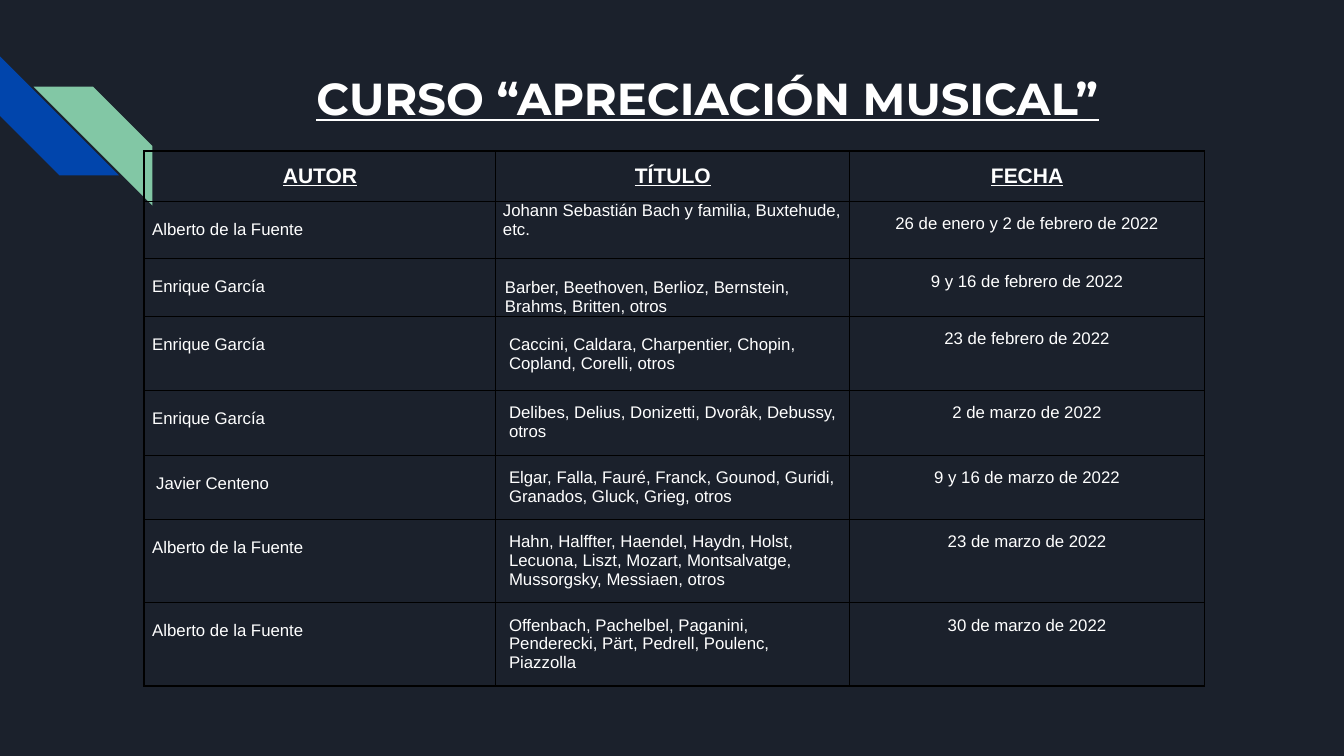
from lxml.etree import SubElement
from pptx import Presentation
from pptx.dml.color import RGBColor
from pptx.enum.shapes import MSO_SHAPE
from pptx.enum.text import MSO_ANCHOR, MSO_AUTO_SIZE, PP_ALIGN
from pptx.oxml import parse_xml
from pptx.oxml.ns import nsdecls, qn
from pptx.util import Inches, Pt

COLORS = {"night": "1B212C", "blue": "0145AC", "green": "82C7A5",
          "text": "FFFFFF", "border": "000000"}
COLUMNS, ROWS = 40, 30
INSET = 0.13

HEADINGS = ["AUTOR", "TÍTULO", "FECHA"]
COLUMN_WIDTHS = [10.47, 10.53, 10.56]
ROW_HEIGHTS = [2, 2.27, 2.27, 2.96, 2.56, 2.56, 3.3, 3.3]

# Author, author indent, titles, title insets (left, top, right, bottom), date
PADDED = (INSET,) * 4
SESSIONS = [
    ("Alberto de la Fuente", 0.08,
     ["Johann Sebastián Bach y familia, Buxtehude, etc."],
     (0.07, 0, 0.07, 0), "26 de enero y 2 de febrero de 2022"),
    ("Enrique García", 0.08,
     ["Barber, Beethoven, Berlioz, Bernstein,", "Brahms, Britten, otros"],
     (0.09, 0.19, 0, 0), "9 y 16 de febrero de 2022"),
    ("Enrique García", 0.08,
     ["Caccini, Caldara, Charpentier, Chopin,", "Copland, Corelli, otros"],
     (0.13, 0.19, 0, 0), "23 de febrero de 2022"),
    ("Enrique García", 0.08,
     ["Delibes, Delius, Donizetti, Dvorâk, Debussy, otros"],
     PADDED, "2 de marzo de 2022"),
    ("Javier Centeno", 0.12,
     ["Elgar, Falla, Fauré, Franck, Gounod, Guridi, Granados, Gluck, Grieg, otros"],
     PADDED, "9 y 16 de marzo de 2022"),
    ("Alberto de la Fuente", 0.08,
     ["Hahn, Halffter, Haendel, Haydn, Holst, Lecuona, Liszt, Mozart, "
      "Montsalvatge, Mussorgsky, Messiaen, otros"],
     PADDED, "23 de marzo de 2022"),
    ("Alberto de la Fuente", 0.08,
     ["Offenbach, Pachelbel, Paganini, Penderecki, Pärt, Pedrell, Poulenc, Piazzolla"],
     PADDED, "30 de marzo de 2022"),
]


def rgb(name):
    return RGBColor.from_string(COLORS[name])


class CourseSlide:
    """Holds the style and the slide; lengths are grid columns and rows."""

    def __init__(self, deck):
        self.column = deck.slide_width / COLUMNS
        self.row = deck.slide_height / ROWS
        self.slide = deck.slides.add_slide(deck.slide_layouts[5])
        fill = self.slide.background.fill
        fill.solid()
        fill.fore_color.rgb = rgb("night")

    def place(self, left, top, width, height):
        return (round(left * self.column), round(top * self.row),
                round(width * self.column), round(height * self.row))

    def style(self, paragraph, size, face="Arial", heading=False):
        font = paragraph.font
        font.size, font.name = Pt(size), face
        font.bold = font.underline = heading
        font.color.rgb = rgb("text")

    def title(self, text, *area):
        title = self.slide.shapes.title
        title.left, title.top, title.width, title.height = self.place(*area)
        frame = title.text_frame
        frame.text = text
        frame.word_wrap = True
        frame.auto_size = MSO_AUTO_SIZE.NONE
        frame.vertical_anchor = MSO_ANCHOR.TOP
        frame.margin_left = frame.margin_right = Inches(INSET)
        frame.margin_top = frame.margin_bottom = Inches(INSET)
        paragraph = frame.paragraphs[0]
        paragraph.alignment = PP_ALIGN.CENTER
        self.style(paragraph, 32, "Montserrat", heading=True)

    def stripe(self, color, left, top, rotation=0, flipped=False):
        stripe = self.slide.shapes.add_shape(
            MSO_SHAPE.DIAGONAL_STRIPE, *self.place(left, top, 3.54, 4.72))
        stripe.adjustments[0] = 0.5
        stripe.rotation = rotation
        if flipped:
            stripe._element.spPr.find(qn("a:xfrm")).set("flipH", "1")
        stripe.shadow.inherit = False
        stripe.fill.solid()
        stripe.fill.fore_color.rgb = rgb(color)
        stripe.line.fill.background()

    def table(self, left, top):
        area = self.place(left, top, sum(COLUMN_WIDTHS), sum(ROW_HEIGHTS))
        table = self.slide.shapes.add_table(
            len(ROW_HEIGHTS), len(COLUMN_WIDTHS), *area).table
        table.first_row = table.horz_banding = False
        for column, width in zip(table.columns, COLUMN_WIDTHS):
            column.width = round(width * self.column)
        for row, height in zip(table.rows, ROW_HEIGHTS):
            row.height = round(height * self.row)
        return table

    def cell(self, cell, lines, insets=PADDED, size=12, centered=False,
             heading=False, spacing=None):
        (cell.margin_left, cell.margin_top,
         cell.margin_right, cell.margin_bottom) = map(Inches, insets)
        cell.vertical_anchor = MSO_ANCHOR.TOP
        cell.fill.background()
        cell.text_frame.text = "\n".join(lines)
        for paragraph in cell.text_frame.paragraphs:
            paragraph.alignment = PP_ALIGN.CENTER if centered else PP_ALIGN.LEFT
            if spacing:
                paragraph.line_spacing = spacing
            self.style(paragraph, size, heading=heading)

    def borders(self, table):
        last_row, last_column = len(ROW_HEIGHTS) - 1, len(COLUMN_WIDTHS) - 1
        for r, row in enumerate(table.rows):
            for c, cell in enumerate(row.cells):
                outer = {"L": c == 0, "R": c == last_column,
                         "T": r == 0, "B": r == last_row}
                for order, (side, thick) in enumerate(outer.items()):
                    width = Pt(1.5 if thick else 0.75)
                    line = parse_xml(f'<a:ln{side} {nsdecls("a")} w="{width}"/>')
                    fill = SubElement(line, qn("a:solidFill"))
                    SubElement(fill, qn("a:srgbClr"), val=COLORS["border"])
                    cell._tc.get_or_add_tcPr().insert(order, line)


def main():
    deck = Presentation()
    deck.slide_width, deck.slide_height = Inches(13.33), Inches(7.5)
    course = CourseSlide(deck)

    # Corner decoration and title
    course.stripe("blue", 0, 2.24, rotation=270)
    course.stripe("green", 1, 3.44, flipped=True)
    course.title("CURSO “APRECIACIÓN MUSICAL”", 5.67, 2.28, 30.78, 3)

    # Programme of sessions
    programme = course.table(4.29, 6)
    for c, heading in enumerate(HEADINGS):
        course.cell(programme.cell(0, c), [heading], size=15,
                    centered=True, heading=True)
    for r, (author, indent, works, insets, date) in enumerate(SESSIONS, 1):
        course.cell(programme.cell(r, 0), [author], (indent, 0, 0, 0), spacing=2.0)
        course.cell(programme.cell(r, 1), works, insets)
        course.cell(programme.cell(r, 2), [date], centered=True)
    course.borders(programme)

    deck.save("out.pptx")


if __name__ == "__main__":
    main()
